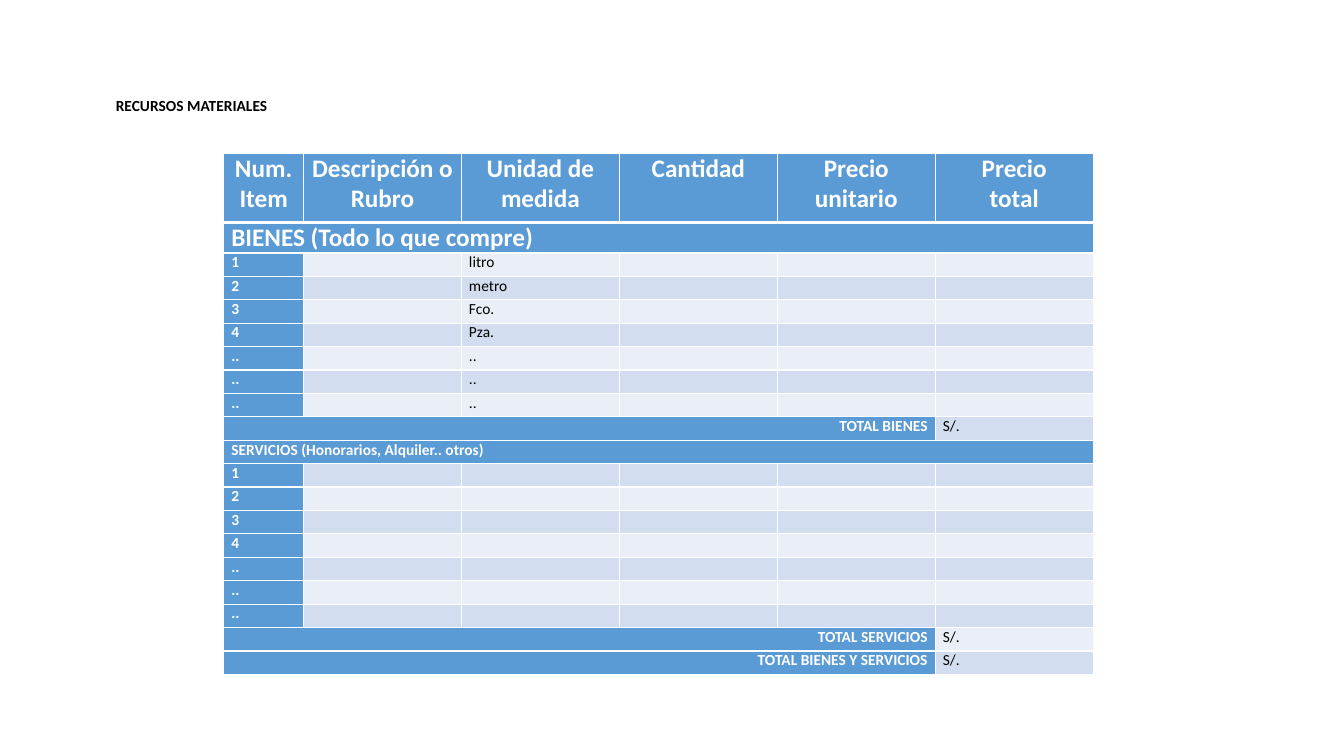
import pptx
import pptx.util
import pptx.dml.color
import pptx.enum.text
import pptx.oxml
import pptx.oxml.ns
from pptx.util import Cm

ALIGN = pptx.enum.text.PP_ALIGN
BLUE, LIGHT, DARK = "5B9BD5", "EAEFF7", "D2DEEF"
WHITE, BLACK = "FFFFFF", "000000"


def tint(code):
    return pptx.dml.color.RGBColor.from_string(code)


class Page:
    """Holds the text style and the current slide."""

    def __init__(self, deck, font, size):
        self.slide = deck.slides.add_slide(deck.slide_layouts[6])
        self.font = font
        self.size = size

    def fill_text(self, frame, text, color, bold, align=ALIGN.LEFT, size=None):
        size = size or self.size
        frame.text = text
        for par in frame.paragraphs:
            par.alignment = align
            for run in par.runs:
                run.font.name = self.font
                run.font.size = pptx.util.Pt(size)
                run.font.bold = bold
                run.font.color.rgb = tint(color)
            if not par.runs:
                end = pptx.oxml.parse_xml(
                    f'<a:endParaRPr {pptx.oxml.ns.nsdecls("a")} sz="{size * 100}"/>')
                par._p.append(end)

    def label(self, text, left, top, width, height):
        frame = self.slide.shapes.add_textbox(
            Cm(left), Cm(top), Cm(width), Cm(height)).text_frame
        frame.word_wrap = True
        frame.vertical_anchor = pptx.enum.text.MSO_ANCHOR.MIDDLE
        self.fill_text(frame, text, BLACK, True)

    def grid(self, left, top, cols, rows):
        shape = self.slide.shapes.add_table(
            len(rows), len(cols), Cm(left), Cm(top), Cm(sum(cols)), Cm(sum(rows)))
        table = shape.table
        for col, width in zip(table.columns, cols):
            col.width = Cm(width)
        for row, height in zip(table.rows, rows):
            row.height = Cm(height)
        return table

    def cell(self, cell, text, fill, edges, **style):
        cell.margin_left = cell.margin_right = Cm(0.19)
        cell.margin_top = cell.margin_bottom = 0
        props = cell._tc.get_or_add_tcPr()
        for side, width in zip("LRTB", edges):
            props.append(pptx.oxml.parse_xml(
                f'<a:ln{side} {pptx.oxml.ns.nsdecls("a")} w="{width * 12700}">'
                f'<a:solidFill><a:srgbClr val="{WHITE}"/></a:solidFill></a:ln{side}>'))
        cell.fill.solid()
        cell.fill.fore_color.rgb = tint(fill)
        self.fill_text(cell.text_frame, text, **style)


def main():
    deck = pptx.Presentation()
    deck.slide_width, deck.slide_height = Cm(33.87), Cm(19.05)
    page = Page(deck, "Calibri", 11)
    page.label("RECURSOS MATERIALES", 2.67, 2.29, 23.11, 0.74)

    items = ["1", "2", "3", "4", "..", "..", ".."]
    units = ["litro", "metro", "Fco.", "Pza.", "..", "..", ".."]
    head = ["Num.\nItem", "Descripción o Rubro", "Unidad de medida",
            "Cantidad", "Precio\nunitario", "Precio\ntotal"]
    rows = [head, ["BIENES (Todo lo que compre)"]]
    rows += [[item, "", unit] for item, unit in zip(items, units)]
    rows += [["TOTAL BIENES", "", "", "", "", "S/."],
             ["SERVICIOS (Honorarios, Alquiler.. otros)"]]
    rows += [[item] for item in items]
    rows += [[name, "", "", "", "", "S/."]
             for name in ("TOTAL SERVICIOS", "TOTAL BIENES Y SERVICIOS")]

    spans = {1: 6, 9: 5, 10: 6, 18: 5, 19: 5}
    table = page.grid(5.64, 3.86, [2.01] + [3.98] * 5, [1.75] + [0.59] * 19)
    for r, row in enumerate(rows):
        span = spans.get(r, 1)
        edges = (1, 1, 3 if r == 1 else 1, 3 if r == 0 else 1)
        for c in range(6):
            solid = r == 0 or c < span
            align = ALIGN.LEFT
            if r == 0:
                align = ALIGN.CENTER
            elif span == 5 and c == 0:
                align = ALIGN.RIGHT
            page.cell(table.cell(r, c), row[c] if c < len(row) else "",
                      BLUE if solid else (DARK if r % 2 else LIGHT), edges,
                      color=WHITE if solid else BLACK, bold=solid, align=align,
                      size=18 if r < 2 else None)
        if span > 1:
            table.cell(r, 0).merge(table.cell(r, span - 1))
    deck.save("out.pptx")


if __name__ == "__main__":
    main()
